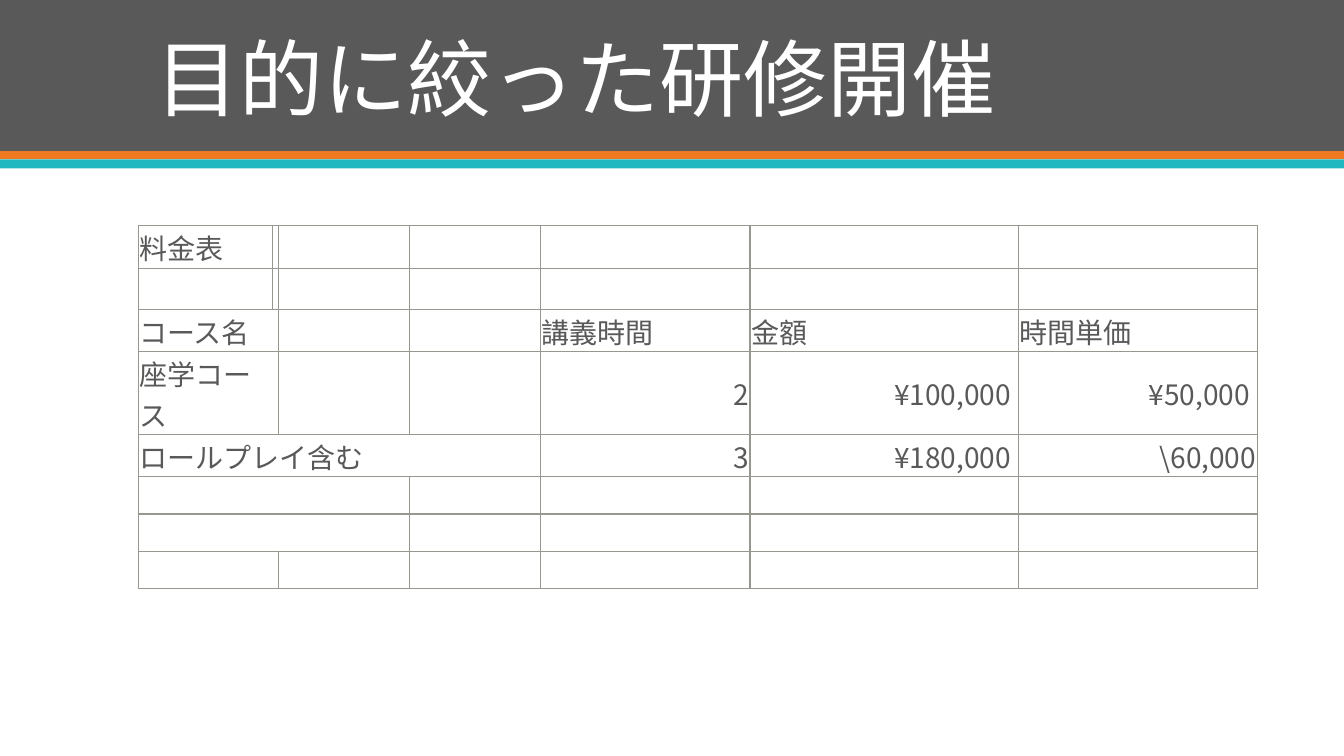
from pptx import Presentation
from pptx.dml.color import RGBColor
from pptx.enum.shapes import MSO_SHAPE
from pptx.enum.text import MSO_ANCHOR, PP_ALIGN
from pptx.oxml import parse_xml
from pptx.oxml.ns import nsdecls
from pptx.util import Inches, Pt

RECT = MSO_SHAPE.RECTANGLE
LOW, MID = MSO_ANCHOR.BOTTOM, MSO_ANCHOR.MIDDLE
LEFT, RIGHT = PP_ALIGN.LEFT, PP_ALIGN.RIGHT

GRAY = RGBColor(0x59, 0x59, 0x59)
ORANGE = RGBColor(0xEF, 0x79, 0x20)
TEAL = RGBColor(0x1E, 0xB8, 0xC1)
WHITE = RGBColor(0xFF, 0xFF, 0xFF)
RULE = RGBColor(0x96, 0x98, 0x90)
FONT = "Noto Sans CJK JP"

# Content
TITLE = "目的に絞った研修開催"
BANDS = [(GRAY, 1.5), (ORANGE, 0.08), (TEAL, 0.09)]
ROWS = [
    ["料金表"],
    [],
    ["コース名", "", "", "", "講義時間", "金額", "時間単価"],
    ["座学コース", "", "", "", "2", "¥100,000 ", "¥50,000 "],
    ["ロールプレイ含む", "", "", "", "3", "¥180,000 ", "\\60,000"],
    [],
    [],
    [],
]
SPANS = {2: 2, 3: 2, 4: 4, 5: 3, 6: 3, 7: 2}  # row: columns joined from the left
PRICED = (3, 4)
FIRST = 4  # first column of figures
COLS = [1.33, 0.05, 1.3, 1.3, 2.08, 2.66, 2.37]
HIGH = [0.42, 0.41, 0.42, 0.82, 0.42] + [0.37] * 3
WIDE, TALL = 13.33, 7.5


def style(obj, form):
    for key, val in form.items():
        setattr(obj, key, val)


def write(para, text, size, color):
    run = para.add_run()
    run.text = text
    style(run.font, {"size": Pt(size), "name": FONT})
    run.font.color.rgb = color
    run.font._element.append(
        parse_xml(f'<a:ea {nsdecls("a")} typeface="{FONT}"/>'))


def frame(cell):
    props = cell._tc.get_or_add_tcPr()
    for at, side in enumerate(("lnL", "lnR", "lnT", "lnB")):
        props.insert(at, parse_xml(
            f'<a:{side} {nsdecls("a")} w="12700"><a:solidFill>'
            f'<a:srgbClr val="{RULE}"/></a:solidFill></a:{side}>'))


deck = Presentation()
style(deck, {"slide_width": Inches(WIDE), "slide_height": Inches(TALL)})
slide = deck.slides.add_slide(deck.slide_layouts[6])

# Header bands, stacked from the top
top = 0
for color, high in BANDS:
    band = slide.shapes.add_shape(RECT, 0, Inches(top), Inches(WIDE), Inches(high))
    band.shadow.inherit = False
    band.fill.solid()
    band.fill.fore_color.rgb = color
    band.line.fill.background()
    top += high

# Title
head = slide.shapes.add_textbox(Inches(1.44), Inches(0.2), Inches(10.5), Inches(1.13))
style(head.text_frame, {"word_wrap": True, "vertical_anchor": LOW})
para = head.text_frame.paragraphs[0]
para.line_spacing = 0.9
write(para, TITLE, 60, WHITE)

# Price table
grid = slide.shapes.add_table(
    len(ROWS), len(COLS), Inches(1.37), Inches(2.24),
    Inches(sum(COLS)), Inches(sum(HIGH))).table
style(grid, {"first_row": False, "horz_banding": False})
for col, wide in zip(grid.columns, COLS):
    col.width = Inches(wide)
for row, high in zip(grid.rows, HIGH):
    row.height = Inches(high)
for r, count in SPANS.items():
    grid.cell(r, 0).merge(grid.cell(r, count - 1))

PAD = {"margin_left": Inches(0.01), "margin_right": Inches(0.01),
       "margin_top": Inches(0.01), "margin_bottom": 0, "vertical_anchor": MID}
for r, texts in enumerate(ROWS):
    for c in range(len(COLS)):
        cell = grid.cell(r, c)
        if cell.is_spanned:
            continue
        style(cell, PAD)
        cell.fill.solid()
        cell.fill.fore_color.rgb = WHITE
        frame(cell)
        if c < len(texts) and texts[c]:
            para = cell.text_frame.paragraphs[0]
            para.alignment = RIGHT if r in PRICED and c >= FIRST else LEFT
            write(para, texts[c], 20, GRAY)

deck.save("out.pptx")
